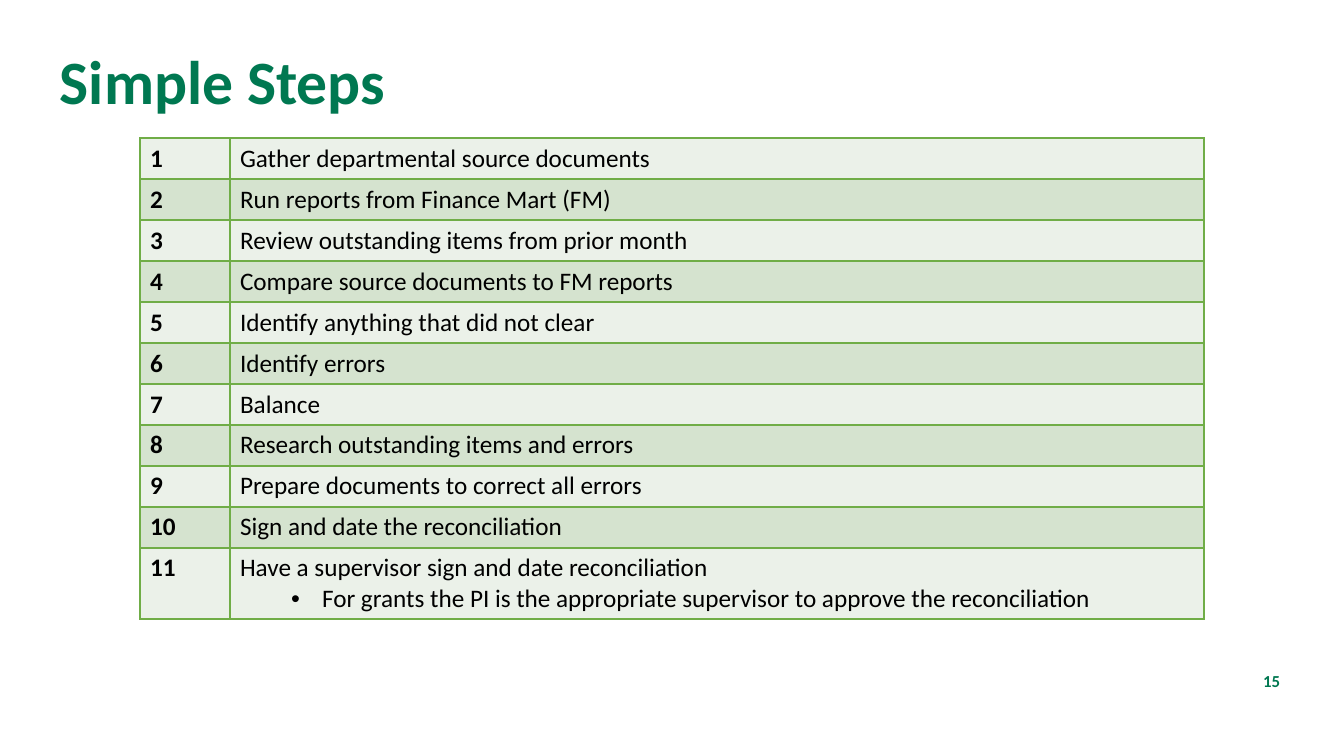
from lxml.etree import SubElement
from pptx import Presentation
from pptx.dml.color import RGBColor
from pptx.enum.text import MSO_ANCHOR, PP_ALIGN
from pptx.oxml.ns import qn
from pptx.util import Pt

# Content: each step is a line, with optional sub-points
TITLE = "Simple Steps"
PAGE_NUMBER = "15"
STEPS = [
    ("Gather departmental source documents", []),
    ("Run reports from Finance Mart (FM)", []),
    ("Review outstanding items from prior month", []),
    ("Compare source documents to FM reports", []),
    ("Identify anything that did not clear", []),
    ("Identify errors", []),
    ("Balance", []),
    ("Research outstanding items and errors", []),
    ("Prepare documents to correct all errors", []),
    ("Sign and date the reconciliation", []),
    ("Have a supervisor sign and date reconciliation",
     ["For grants the PI is the appropriate supervisor to approve the reconciliation"]),
]

# Style and layout, in px
FONT = "Calibri"
GREEN = RGBColor(0x00, 0x78, 0x51)
BLACK = RGBColor(0x00, 0x00, 0x00)
BORDER = RGBColor(0x70, 0xAD, 0x47)
BANDS = [RGBColor(0xEB, 0xF1, 0xE9), RGBColor(0xD5, 0xE3, 0xCF)]
SLIDE_SIZE = (1344, 756)
TITLE_BOX = (50, 46, 1239, 86)
PAGE_BOX = (1196, 666, 94, 29)
TABLE_LEFT, TABLE_TOP = 140, 138
COLUMN_WIDTHS = (90, 974)
ROW_HEIGHT, SUBPOINT_HEIGHT = 41, 30
BULLET_MARGIN, BULLET_INDENT = 82, -31


def px(length):
    return round(length * 914400 / 100.8)


def write(frame, text, size=18, color=BLACK, bold=False, align=PP_ALIGN.LEFT,
          spacing=None, bullet=False, new=False):
    paragraph = frame.add_paragraph() if new else frame.paragraphs[0]
    if bullet:
        properties = paragraph._p.get_or_add_pPr()
        properties.set("marL", str(px(BULLET_MARGIN)))
        properties.set("indent", str(px(BULLET_INDENT)))
        SubElement(properties, qn("a:buFont")).set("typeface", "Arial")
        SubElement(properties, qn("a:buChar")).set("char", "•")
    paragraph.alignment = align
    if spacing:
        paragraph.line_spacing = spacing
    run = paragraph.add_run()
    run.text = text
    run.font.name, run.font.size, run.font.bold = FONT, Pt(size), bold
    run.font.color.rgb = color


def add_text(box, text, anchor, **style):
    frame = slide.shapes.add_textbox(*map(px, box)).text_frame
    frame.word_wrap = True
    frame.vertical_anchor = anchor
    write(frame, text, **style)


def paint_cell(cell, fill):
    properties = cell._tc.get_or_add_tcPr()
    for side in ("a:lnL", "a:lnR", "a:lnT", "a:lnB"):
        line = SubElement(properties, qn(side), w=str(Pt(1)))
        solid = SubElement(line, qn("a:solidFill"))
        SubElement(solid, qn("a:srgbClr"), val=str(BORDER))
    cell.fill.solid()
    cell.fill.fore_color.rgb = fill


presentation = Presentation()
presentation.slide_width, presentation.slide_height = map(px, SLIDE_SIZE)
slide = presentation.slides.add_slide(presentation.slide_layouts[6])

# Title and page number
add_text(TITLE_BOX, TITLE, MSO_ANCHOR.TOP, size=44, color=GREEN, bold=True, spacing=0.9)
add_text(PAGE_BOX, PAGE_NUMBER, MSO_ANCHOR.MIDDLE, size=12, color=GREEN, bold=True,
         align=PP_ALIGN.RIGHT)

# Table of numbered steps
row_heights = [ROW_HEIGHT + SUBPOINT_HEIGHT * len(subpoints) for _, subpoints in STEPS]
steps_table = slide.shapes.add_table(
    len(STEPS), len(COLUMN_WIDTHS), px(TABLE_LEFT), px(TABLE_TOP),
    px(sum(COLUMN_WIDTHS)), px(sum(row_heights))).table
steps_table.first_row = False
for column, width in zip(steps_table.columns, COLUMN_WIDTHS):
    column.width = px(width)

for index, (step, subpoints) in enumerate(STEPS):
    steps_table.rows[index].height = px(row_heights[index])
    number_cell, step_cell = steps_table.rows[index].cells
    write(number_cell.text_frame, str(index + 1), bold=True)
    write(step_cell.text_frame, step)
    for subpoint in subpoints:
        write(step_cell.text_frame, subpoint, bullet=True, new=True)
    for cell in (number_cell, step_cell):
        paint_cell(cell, BANDS[index % 2])

presentation.save("out.pptx")
